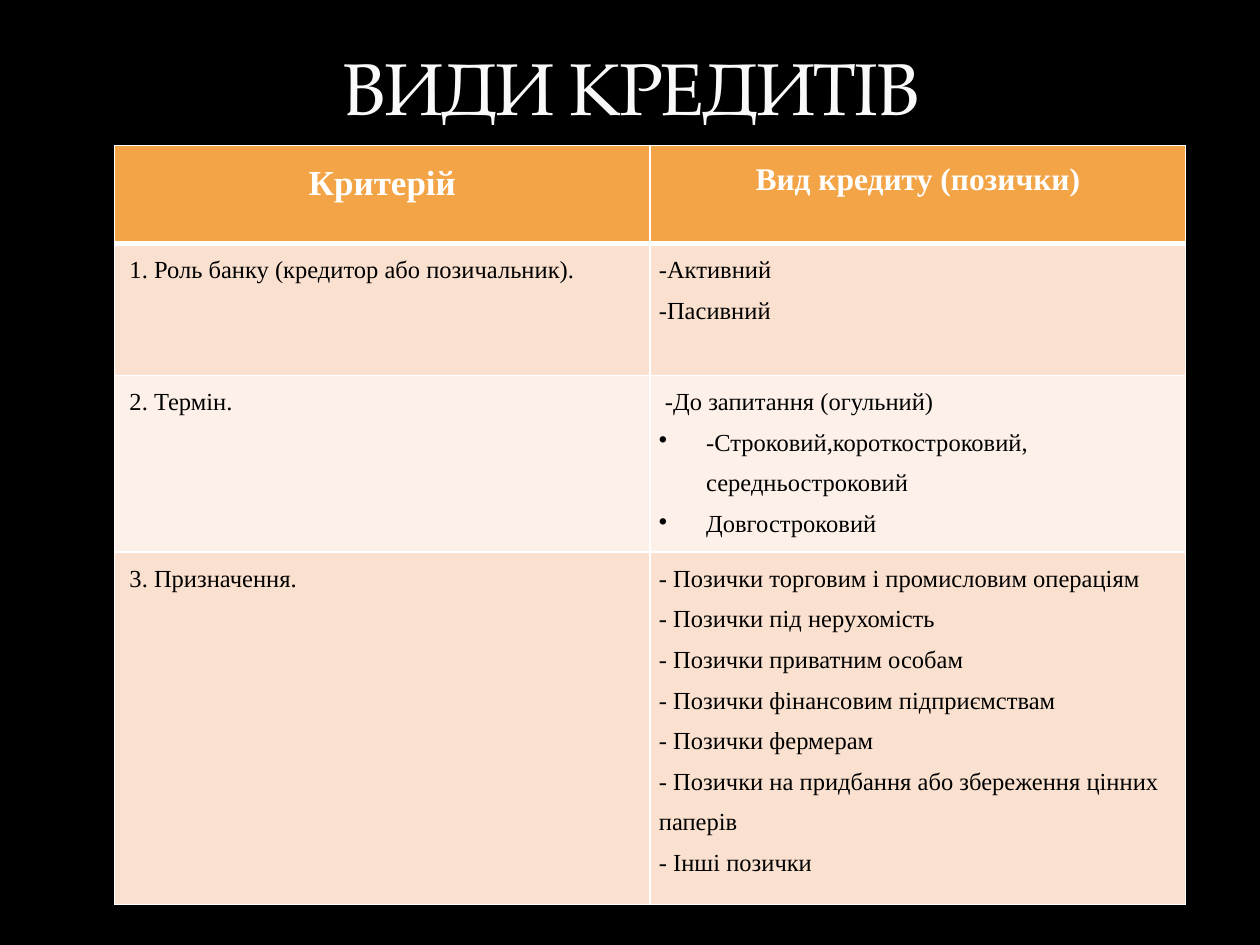
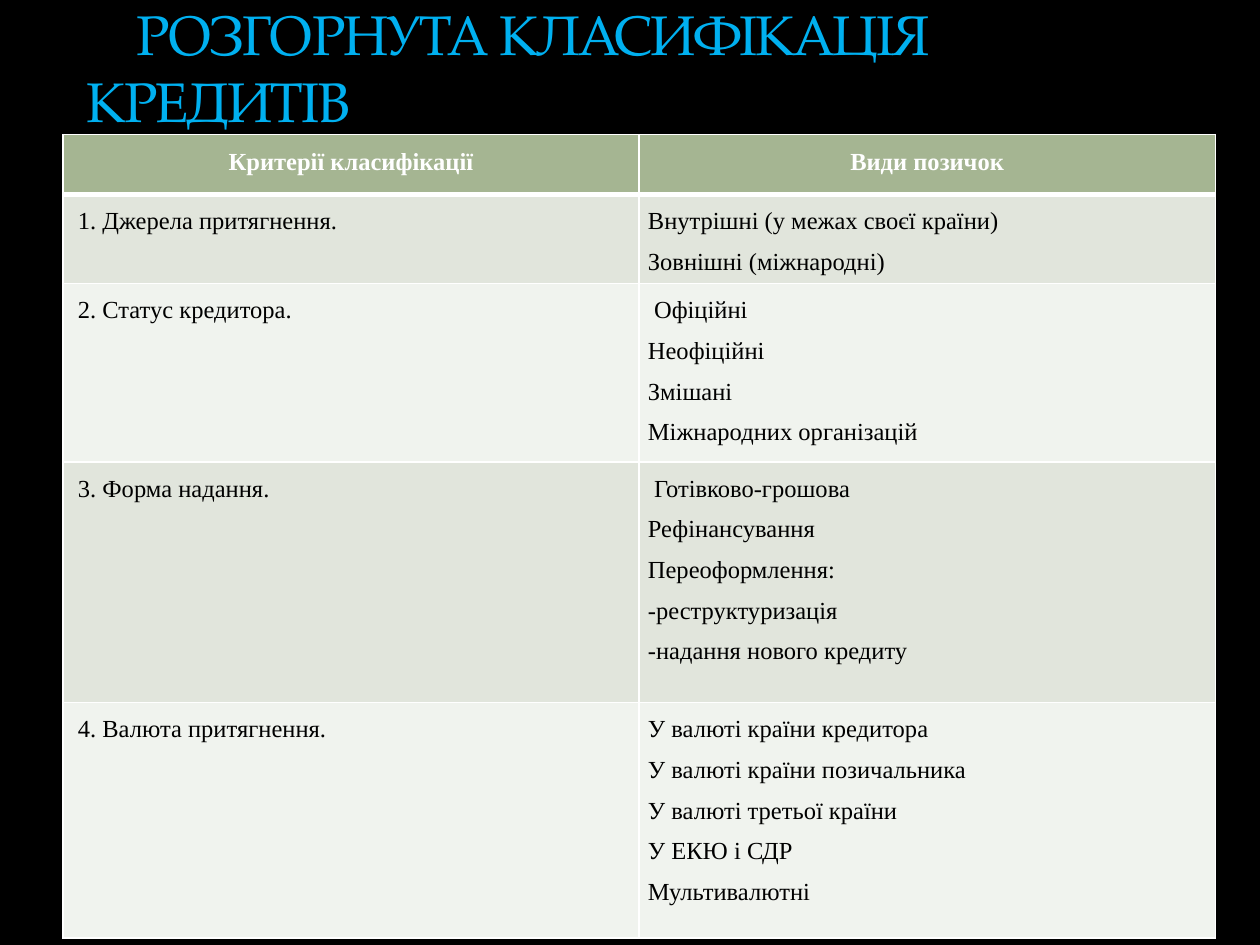
import pptx
import pptx.dml.color
import pptx.enum.text
import pptx.oxml.ns
import pptx.util
from lxml import etree

Pt = pptx.util.Pt
ALIGN = pptx.enum.text.PP_ALIGN
TITLE_FONT = "TeX Gyre Pagella"
TABLE_FONT = "Times New Roman"
BLACK = "000000"
WHITE = "FFFFFF"
TITLE_WHITE = "F9F9F9"
TITLE_BLUE = "00B0F0"
TITLE_OUTLINE = "3C4422"
ORANGE_BANDS = ("F3A447", "FAE0CF", "FDF0E9")
GREEN_BANDS = ("A5B592", "E1E5DC", "F0F3EE")
BODY_SIZE = 14
BULLET = "• "

LOAN_TYPES = [
    (75.5, " 1. Роль банку (кредитор або позичальник).",
     ["-Активний", "-Пасивний"]),
    (98, " 2. Термін.",
     [" -До запитання (огульний)",
      "• -Строковий,короткостроковий, середньостроковий",
      "• Довгостроковий"]),
    (195.5, " 3. Призначення.",
     ["- Позички торговим і промисловим операціям",
      "- Позички під нерухомість",
      "- Позички приватним особам",
      "- Позички фінансовим підприємствам",
      "- Позички фермерам",
      "- Позички на придбання або збереження цінних паперів",
      "- Інші позички"]),
]

LOAN_CLASSES = [
    (51, " 1. Джерела притягнення.",
     ["Внутрішні (у межах своєї країни)", "Зовнішні (міжнародні)"]),
    (102, " 2. Статус кредитора.",
     [" Офіційні", "Неофіційні", "Змішані", "Міжнародних організацій"]),
    (137.5, " 3. Форма надання.",
     [" Готівково-грошова", "Рефінансування", "Переоформлення:",
      "-реструктуризація", "-надання нового кредиту"]),
    (134.5, " 4. Валюта притягнення.",
     ["У валюті країни кредитора", "У валюті країни позичальника",
      "У валюті третьої країни", "У ЕКЮ і СДР", "Мультивалютні"]),
]


def rgb(color):
    return pptx.dml.color.RGBColor.from_string(color)


def sub(parent, tag, **attributes):
    return etree.SubElement(parent, pptx.oxml.ns.qn(tag), attributes)


def add_line(parent, tag, color, width):
    line = sub(parent, tag, w=str(int(Pt(width))))
    return sub(sub(line, "a:solidFill"), "a:srgbClr", val=color)


def add_run(paragraph, text, font, size, color, bold=False):
    run = paragraph.add_run()
    run.text = text
    run.font.name = font
    run.font.size = Pt(size)
    run.font.bold = bold
    run.font.color.rgb = rgb(color)
    return run


def add_slide(deck):
    slide = deck.slides.add_slide(deck.slide_layouts[6])
    slide.background.fill.solid()
    slide.background.fill.fore_color.rgb = rgb(BLACK)
    return slide


def add_title(slide, text, place, size, color, align=ALIGN.LEFT, first_indent=0):
    frame = slide.shapes.add_textbox(*map(Pt, place)).text_frame
    frame.word_wrap = True
    frame.vertical_anchor = pptx.enum.text.MSO_ANCHOR.BOTTOM
    heading = frame.paragraphs[0]
    heading.alignment = align
    if first_indent:
        heading._p.get_or_add_pPr().set("indent", str(int(Pt(first_indent))))
    run = add_run(heading, text, TITLE_FONT, size, color)
    properties = run.font._element
    properties.set("spc", "-100")
    outline = add_line(properties, "a:ln", TITLE_OUTLINE, 0.25)
    sub(outline, "a:alpha", val="25000")
    properties.insert(0, properties[-1])


def fill_cell(cell, lines, fill, size, color, align, bold=False, top=1, bottom=1):
    cell.margin_left = cell.margin_right = Pt(5)
    cell.margin_top = cell.margin_bottom = 0
    borders = {"a:lnL": 1, "a:lnR": 1, "a:lnT": top, "a:lnB": bottom}
    for side, width in borders.items():
        add_line(cell._tc.get_or_add_tcPr(), side, WHITE, width)
    cell.fill.solid()
    cell.fill.fore_color.rgb = rgb(fill)
    frame = cell.text_frame
    for index, line in enumerate(lines):
        paragraph = frame.add_paragraph() if index else frame.paragraphs[0]
        if line.startswith(BULLET):
            properties = paragraph._p.get_or_add_pPr()
            indent = int(Pt(27))
            properties.set("marL", str(indent))
            properties.set("indent", str(-indent))
            sub(properties, "a:buChar", char=BULLET.strip())
        paragraph.alignment = align
        paragraph.line_spacing = 1.5
        add_run(paragraph, line.removeprefix(BULLET), TABLE_FONT, size, color, bold)


def add_criteria_table(slide, left, top, column_width, header_height, headers,
                       rows, bands, justified_rows=()):
    header_fill, *body_fills = bands
    heights = [header_height] + [height for height, _, _ in rows]
    table = slide.shapes.add_table(
        len(heights), 2, Pt(left), Pt(top),
        Pt(2 * column_width), Pt(sum(heights))).table
    for column in table.columns:
        column.width = Pt(column_width)
    for row, height in zip(table.rows, heights):
        row.height = Pt(height)
    for column, (header, size) in enumerate(headers):
        fill_cell(table.cell(0, column), [header], header_fill, size, WHITE,
                  ALIGN.CENTER, bold=True, bottom=3)
    for number, (_, criterion, kinds) in enumerate(rows, 1):
        fill = body_fills[(number - 1) % 2]
        top_border = 3 if number == 1 else 1
        kinds_align = ALIGN.JUSTIFY if number in justified_rows else ALIGN.LEFT
        fill_cell(table.cell(number, 0), [criterion], fill, BODY_SIZE, BLACK,
                  ALIGN.LEFT, top=top_border)
        fill_cell(table.cell(number, 1), kinds, fill, BODY_SIZE, BLACK,
                  kinds_align, top=top_border)


def main():
    deck = pptx.Presentation()
    deck.slide_width, deck.slide_height = Pt(720), Pt(540)

    types_slide = add_slide(deck)
    add_title(types_slide, "ВИДИ КРЕДИТІВ", (36.75, -30, 648, 108), 42,
              TITLE_WHITE, align=ALIGN.CENTER)
    add_criteria_table(types_slide, 65.5, 83, 306, 56,
                       [("Критерій", 20), ("Вид кредиту (позички)", 18)],
                       LOAN_TYPES, ORANGE_BANDS, justified_rows=(1, 2))

    classes_slide = add_slide(deck)
    add_criteria_table(classes_slide, 36, 77, 329.25, 34,
                       [("Критерії класифікації", BODY_SIZE),
                        ("Види позичок", BODY_SIZE)],
                       LOAN_CLASSES, GREEN_BANDS)
    add_title(classes_slide, "РОЗГОРНУТА КЛАСИФІКАЦІЯ КРЕДИТІВ",
              (42.5, 21, 648, 59), 32, TITLE_BLUE, first_indent=28.5)

    deck.save("out.pptx")


if __name__ == "__main__":
    main()
